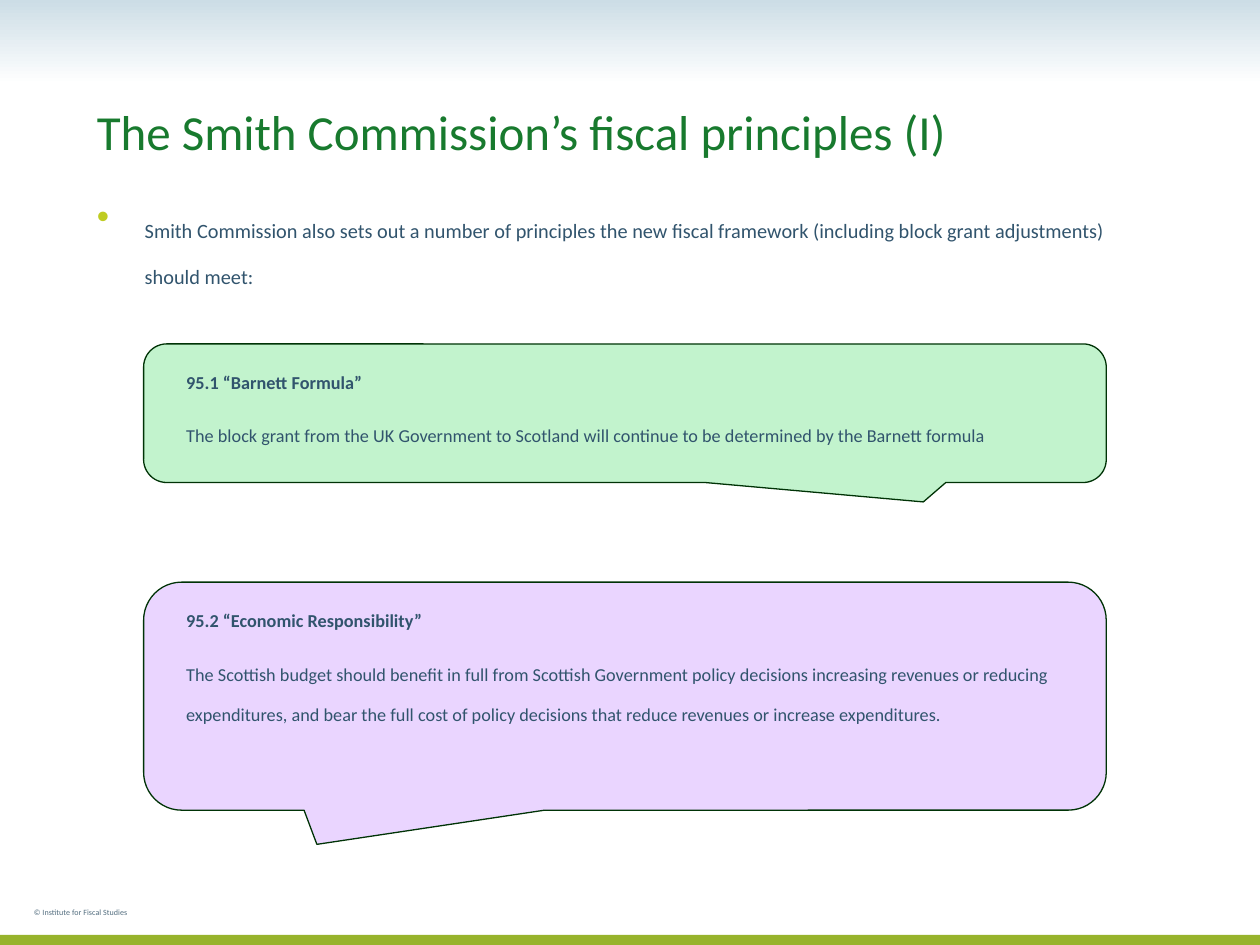
from lxml import etree
from pptx import Presentation
from pptx.dml.color import RGBColor
from pptx.enum.shapes import MSO_SHAPE
from pptx.enum.text import MSO_ANCHOR
from pptx.oxml.ns import qn
from pptx.util import Inches, Pt

RECTANGLE = MSO_SHAPE.RECTANGLE
CALLOUT = MSO_SHAPE.ROUNDED_RECTANGULAR_CALLOUT
TOP, BOTTOM = MSO_ANCHOR.TOP, MSO_ANCHOR.BOTTOM

# Content
TITLE = "The Smith Commission’s fiscal principles (I)"
INTRO = ("Smith Commission also sets out a number of principles the new fiscal "
         "framework (including block grant adjustments) should meet:")
COPYRIGHT = "© Institute for Fiscal Studies"
PRINCIPLES = [
    {"heading": "95.1 “Barnett Formula”",
     "body": "The block grant from the UK Government to Scotland will continue "
             "to be determined by the Barnett formula",
     "fill": "green", "top": 2.73, "height": 1.1, "tail": (0.31, 0.64)},
    {"heading": "95.2 “Economic Responsibility”",
     "body": "The Scottish budget should benefit in full from Scottish Government "
             "policy decisions increasing revenues or reducing expenditures, and "
             "bear the full cost of policy decisions that reduce revenues or "
             "increase expenditures.",
     "fill": "lilac", "top": 4.62, "height": 1.81, "tail": (-0.32, 0.65)},
]

# Style and layout, in inches
COLORS = {"sky": "CCDDE6", "white": "FFFFFF", "footer": "97B32C",
          "green": "C2F3CD", "lilac": "EAD5FF", "outline": "003306",
          "title": "187A2E", "text": "31546D", "small": "526D7F",
          "bullet": "BFCC22"}
FONT = "Calibri"
WIDTH, HEIGHT = 10, 7.5
HEADER_HEIGHT, FOOTER_HEIGHT = 0.67, 0.08
MARGIN, CONTENT_WIDTH = 0.67, 8.58
CALLOUT_LEFT, CALLOUT_WIDTH = 1.14, 7.64
CALLOUT_PADDING = 0.24
HANGING = 0.38
LOWERED = "-25000"


def color(name):
    return RGBColor.from_string(COLORS[name])


def add_box(slide, kind, left, top, width, height):
    shape = slide.shapes.add_shape(kind, Inches(left), Inches(top),
                                   Inches(width), Inches(height))
    shape.shadow.inherit = False
    shape.line.fill.background()
    return shape


def fill_solid(shape, name):
    shape.fill.solid()
    shape.fill.fore_color.rgb = color(name)


def add_text(slide, area, lines, size, name, anchor=TOP, spacing=0.95,
             lowered=True):
    """Write (text, bold) lines as paragraphs and return them."""
    box = slide.shapes.add_textbox(*(Inches(length) for length in area))
    frame = box.text_frame
    frame.word_wrap = True
    frame.vertical_anchor = anchor
    for index, (text, bold) in enumerate(lines):
        paragraph = frame.paragraphs[0] if index == 0 else frame.add_paragraph()
        paragraph.line_spacing = spacing
        if index:
            paragraph.space_before = Pt(size * 0.2)
        if index < len(lines) - 1:
            paragraph.space_after = Pt(size * 0.2)
        run = paragraph.add_run()
        run.text = text
        run.font.name = FONT
        run.font.size = Pt(size)
        run.font.bold = bold
        run.font.color.rgb = color(name)
        if lowered:
            run.font._element.set("baseline", LOWERED)
    return frame.paragraphs


def add_bullet(paragraph):
    properties = paragraph._p.get_or_add_pPr()
    properties.set("marL", str(Inches(HANGING)))
    properties.set("indent", str(-Inches(HANGING)))
    bullet_color = etree.SubElement(properties, qn("a:buClr"))
    etree.SubElement(bullet_color, qn("a:srgbClr"), val=COLORS["bullet"])
    etree.SubElement(properties, qn("a:buFont"), typeface="Arial")
    etree.SubElement(properties, qn("a:buChar"), char="•")


def add_bands(slide):
    header = add_box(slide, RECTANGLE, 0, 0, WIDTH, HEADER_HEIGHT)
    header.fill.gradient()
    header.fill.gradient_angle = 270
    for stop, name, position in zip(header.fill.gradient_stops,
                                    ("sky", "white"), (0, 1)):
        stop.color.rgb = color(name)
        stop.position = position
    footer = add_box(slide, RECTANGLE, 0, HEIGHT - FOOTER_HEIGHT,
                     WIDTH, FOOTER_HEIGHT)
    fill_solid(footer, "footer")


def add_principle(slide, principle):
    top, height = principle["top"], principle["height"]
    callout = add_box(slide, CALLOUT, CALLOUT_LEFT, top, CALLOUT_WIDTH, height)
    fill_solid(callout, principle["fill"])
    callout.line.color.rgb = color("outline")
    callout.line.width = Pt(0.75)
    callout.adjustments[0], callout.adjustments[1] = principle["tail"]
    area = (CALLOUT_LEFT + CALLOUT_PADDING, top,
            CALLOUT_WIDTH - 2 * CALLOUT_PADDING, height)
    add_text(slide, area, [(principle["heading"], True),
                           (principle["body"], False)], 18, "text")


def main():
    presentation = Presentation()
    presentation.slide_width = Inches(WIDTH)
    presentation.slide_height = Inches(HEIGHT)
    slide = presentation.slides.add_slide(presentation.slide_layouts[6])

    # Header, footer and copyright line
    add_bands(slide)
    add_text(slide, (0.17, 7.08, 2.75, 0.25), [(COPYRIGHT, False)], 8, "small",
             spacing=1.0)

    # Title and introduction
    add_text(slide, (MARGIN, 0.25, CONTENT_WIDTH, 1.08), [(TITLE, False)], 28,
             "title", anchor=BOTTOM, spacing=0.9, lowered=False)
    intro = add_text(slide, (MARGIN, 1.5, CONTENT_WIDTH, 0.74),
                     [(INTRO, False)], 20, "text")
    add_bullet(intro[0])

    # Principles in callouts
    for principle in PRINCIPLES:
        add_principle(slide, principle)

    presentation.save("out.pptx")


if __name__ == "__main__":
    main()
